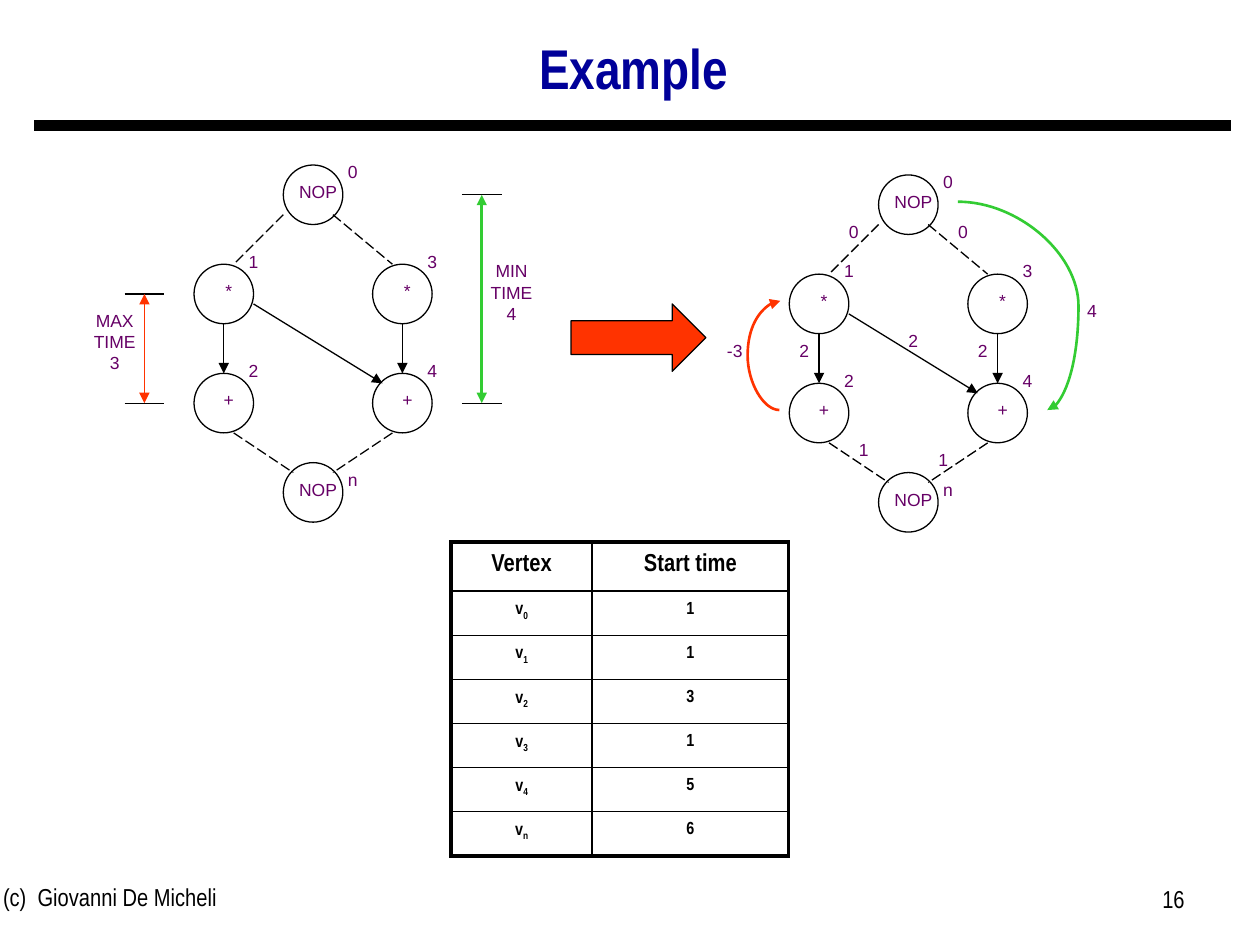
"""Build a slide showing a scheduling graph with timing constraints and its start times."""
import dataclasses

import pptx
import pptx.dml.color
import pptx.enum.dml
import pptx.enum.shapes
import pptx.enum.text
import pptx.oxml
import pptx.oxml.ns
import pptx.util
from pptx.util import Inches


@dataclasses.dataclass(frozen=True)
class Theme:
    """Colours, fonts and type sizes of the slide."""

    black = pptx.dml.color.RGBColor.from_string("000000")
    navy = pptx.dml.color.RGBColor.from_string("000099")
    purple = pptx.dml.color.RGBColor.from_string("660066")
    red = pptx.dml.color.RGBColor.from_string("FF3300")
    green = pptx.dml.color.RGBColor.from_string("33CC33")
    label_font = "Arial"
    heading_font = "Arial Narrow"
    title_size = pptx.util.Pt(32)
    heading_size = pptx.util.Pt(14)
    label_size = pptx.util.Pt(10)
    thin = pptx.util.Pt(0.75)
    medium = pptx.util.Pt(1.5)
    thick = pptx.util.Pt(6)


theme = Theme()
align = pptx.enum.text.PP_ALIGN
connector_type = pptx.enum.shapes.MSO_CONNECTOR
shape_type = pptx.enum.shapes.MSO_SHAPE

presentation = pptx.Presentation()
presentation.slide_width = Inches(10)
presentation.slide_height = Inches(7.5)
slide = presentation.slides.add_slide(presentation.slide_layouts[5])

unit = presentation.slide_width / 127
grid_left, grid_top = Inches(1.54), Inches(1.31)


def add_text(container, text, box, size=theme.label_size, font=theme.label_font,
             color=theme.purple, alignment=align.CENTER):
    """Add a wrapped text box at grid column, row, width and height."""
    column, row, width, height = box
    shape = container.add_textbox(round(grid_left + column * unit), round(grid_top + row * unit),
                                  round(width * unit), round(height * unit))
    shape.text_frame.word_wrap = True
    paragraph = shape.text_frame.paragraphs[0]
    paragraph.text = text
    paragraph.alignment = alignment
    paragraph.font.size, paragraph.font.name = size, font
    paragraph.font.color.rgb = color


def add_line(container, start, end, color=theme.black, width=theme.thin, ends=(),
             dashed=False, bend=None):
    """Add a line between two grid points, curved when a bend ratio is given."""
    kind = connector_type.STRAIGHT if bend is None else connector_type.CURVE
    (x1, y1), (x2, y2) = start, end
    connector = container.add_connector(
        kind, round(grid_left + x1 * unit), round(grid_top + y1 * unit),
        round(grid_left + x2 * unit), round(grid_top + y2 * unit))
    connector.line.color.rgb = color
    connector.line.width = width
    if dashed:
        connector.line.dash_style = pptx.enum.dml.MSO_LINE.LONG_DASH
    properties = connector._element.spPr
    outline = properties.find(pptx.oxml.ns.qn("a:ln"))
    for end_name in ends:
        outline.append(pptx.oxml.parse_xml(
            f'<a:{end_name} {pptx.oxml.ns.nsdecls("a")} type="triangle"/>'))
    properties.append(pptx.oxml.parse_xml(f'<a:effectLst {pptx.oxml.ns.nsdecls("a")}/>'))
    if bend is not None:
        guides = properties.find(pptx.oxml.ns.qn("a:prstGeom")).get_or_add_avLst()
        guides.append(pptx.oxml.parse_xml(
            f'<a:gd {pptx.oxml.ns.nsdecls("a")} name="adj1" fmla="val {round(bend * 100000)}"/>'))


title = slide.shapes.title
title.left, title.top, title.width, title.height = map(Inches, (0.78, 0.14, 8.5, 0.85))
title.text_frame.text = "Example"
title.text_frame.vertical_anchor = pptx.enum.text.MSO_ANCHOR.MIDDLE
paragraph = title.text_frame.paragraphs[0]
paragraph.alignment, paragraph.line_spacing = align.CENTER, 0.9
paragraph.font.name, paragraph.font.size = theme.heading_font, theme.title_size
paragraph.font.bold, paragraph.font.color.rgb = True, theme.navy

add_line(slide.shapes, (-16.1, -4), (104.5, -4), width=theme.thick)
add_text(slide.shapes, "(c)  Giovanni De Micheli", (-20.5, 71.6, 40.3, 6.6),
         theme.heading_size, theme.heading_font, theme.black, align.LEFT)
add_text(slide.shapes, "16", (71.5, 71.8, 29.6, 6.6),
         theme.heading_size, theme.heading_font, theme.black, align.RIGHT)

nodes = [("NOP", "0", 9, 0), ("NOP", "n", 9, 30), ("*", "1", 0, 10),
         ("*", "3", 18, 10), ("+", "2", 0, 21), ("+", "4", 18, 21)]
dashed_edges = [((9, 5), (4, 10)), ((14, 5), (20, 10)), ((4, 27), (10, 31)), ((20, 27), (14, 31))]
arrow_edges = [((3, 16), (3, 21)), ((21, 16), (21, 21)), ((6, 14), (19, 22))]

for graph_column, graph_row in [(0, 0), (60, 1)]:
    graph = slide.shapes.add_group_shape().shapes
    for operation, vertex, column, row in nodes:
        x, y = graph_column + column, graph_row + row
        circle = graph.add_shape(shape_type.OVAL, round(grid_left + x * unit),
                                 round(grid_top + y * unit), round(6 * unit), round(6 * unit))
        circle.shadow.inherit = False
        circle.fill.background()
        circle.line.color.rgb, circle.line.width = theme.black, theme.thin
        add_text(graph, operation, (x - 1, y + 1, 9, 3.4))
        label_rise = 0 if vertex == "n" else 1 if vertex == "0" else 2
        add_text(graph, vertex, (x + (5 if operation == "NOP" else 4), y - label_rise, 4, 3.4))
    for edges, style in [(dashed_edges, {"dashed": True}), (arrow_edges, {"ends": ["tailEnd"]})]:
        for (x1, y1), (x2, y2) in edges:
            add_line(graph, (graph_column + x1, graph_row + y1),
                     (graph_column + x2, graph_row + y2), **style)

for text, text_column, text_row, column, top, color, width in [
        ("MAX TIME 3", -12, 14, -5, 13, theme.red, theme.thin),
        ("MIN TIME 4", 28, 9, 29, 3, theme.green, theme.medium)]:
    add_text(slide.shapes, text, (text_column, text_row, 8, 7.6))
    for row in (top, 24):
        add_line(slide.shapes, (column - 2, row), (column + 2, row))
    add_line(slide.shapes, (column, top), (column, 24), color, width, ["headEnd", "tailEnd"])

add_line(slide.shapes, (59, 24.7), (59.1, 13.7), theme.red, theme.medium, ["tailEnd"], bend=-32)
add_line(slide.shapes, (77, 3.7), (86, 24.7), theme.green, theme.medium, ["tailEnd"], bend=1.35)

for weight, column, row in [("-3", 52, 17), ("4", 88, 13), ("0", 64, 5), ("0", 75, 5),
                            ("2", 77, 17), ("2", 70, 16), ("2", 59, 17), ("1", 65, 27),
                            ("1", 73, 28)]:
    add_text(slide.shapes, weight, (column, row, 5, 3.4))

start_times = [("Vertex", "", "Start time"), ("v", "0", "1"), ("v", "1", "1"), ("v", "2", "3"),
               ("v", "3", "1"), ("v", "4", "5"), ("v", "n", "6")]
last_row = len(start_times) - 1
table = slide.shapes.add_table(len(start_times), 2, Inches(3.58), Inches(4.3),
                               Inches(2.68), Inches(2.48)).table
table.first_row = table.horz_banding = False
table.columns[0].width, table.columns[1].width = Inches(1.12), Inches(1.56)
for row, (name, subscript, start_time) in enumerate(start_times):
    table.rows[row].height = Inches(0.35 if row else 0.39)
    for column, pieces in enumerate([(name, subscript), (start_time,)]):
        cell = table.cell(row, column)
        paragraph = cell.text_frame.paragraphs[0]
        paragraph.alignment, paragraph.line_spacing = align.CENTER, 1.25
        paragraph.font.name, paragraph.font.bold = theme.heading_font, True
        paragraph.font.size = theme.label_size if row else theme.heading_size
        paragraph.font.color.rgb = theme.black
        for position, piece in enumerate(filter(None, pieces)):
            run = paragraph.add_run()
            run.text = piece
            if position:
                run._r.get_or_add_rPr().set("baseline", "-25000")
        outer_sides = {"lnL": column == 0, "lnR": column == 1,
                       "lnT": row == 0, "lnB": row == last_row}
        for side, is_outer in outer_sides.items():
            cell._tc.get_or_add_tcPr().append(pptx.oxml.parse_xml(
                f'<a:{side} {pptx.oxml.ns.nsdecls("a")} w="{pptx.util.Pt(2.25 if is_outer else 1)}">'
                f'<a:solidFill><a:srgbClr val="{theme.black}"/></a:solidFill></a:{side}>'))
        cell.fill.background()

block_arrow = slide.shapes.add_shape(
    shape_type.RIGHT_ARROW, round(grid_left + 38 * unit), round(grid_top + 14 * unit),
    round(13.6 * unit), round(6.8 * unit))
block_arrow.shadow.inherit = False
block_arrow.fill.solid()
block_arrow.fill.fore_color.rgb = theme.red
block_arrow.line.color.rgb, block_arrow.line.width = theme.black, theme.thin

presentation.save("out.pptx")
